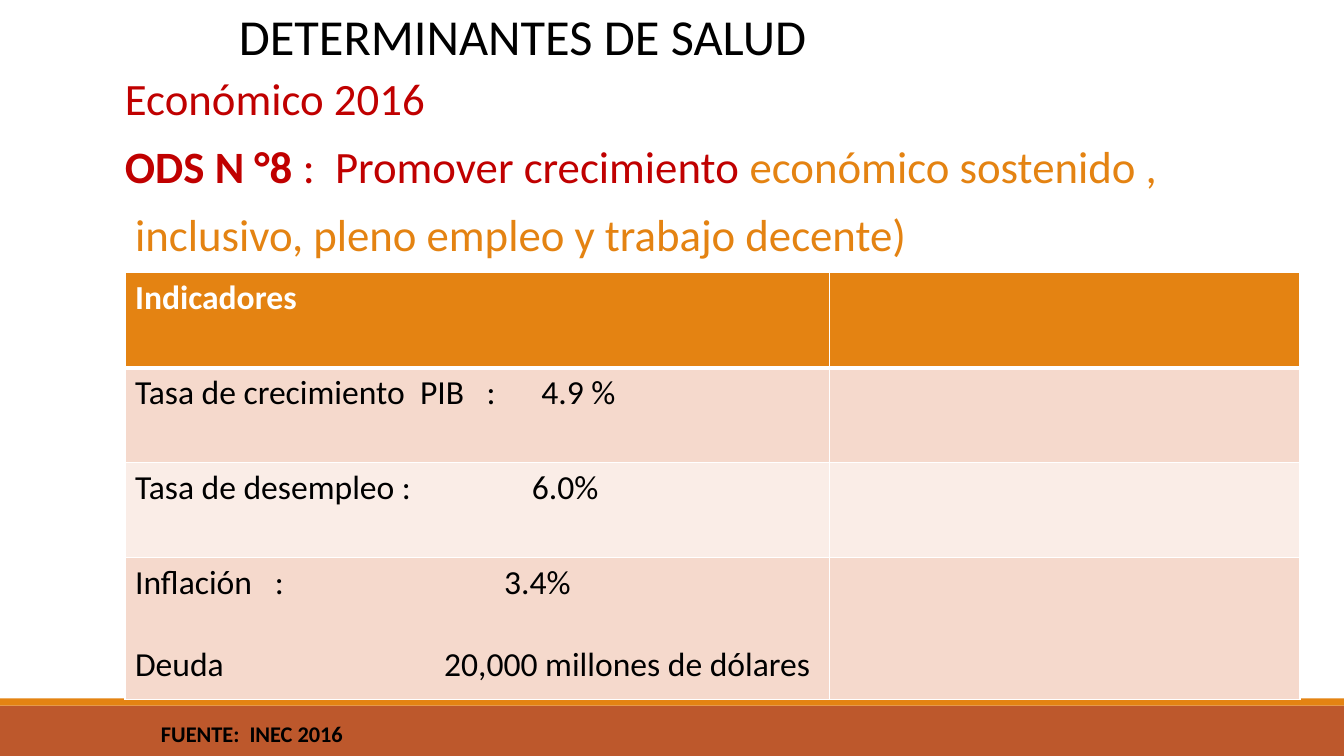
import lxml.etree
import pptx
import pptx.dml.color
import pptx.enum.shapes
import pptx.oxml.ns
import pptx.util
from pptx.util import Cm

ORANGE, RUST, RED = "E48312", "BD582C", "C00000"
BLACK, WHITE = "000000", "FFFFFF"
DARK_BAND, LIGHT_BAND = "F5D9CC", "FAEDE7"


def rgb(value):
    """Turn a hex string into a colour."""
    return pptx.dml.color.RGBColor.from_string(value)


def add_element(parent, tag, **attributes):
    """Append a drawing element to a parent element."""
    return lxml.etree.SubElement(parent, pptx.oxml.ns.qn(tag), attributes)


def add_run(paragraph, text, size, color, bold=False):
    """Append one formatted run to a paragraph."""
    run = paragraph.add_run()
    run.text = text
    run.font.name = "Calibri"
    run.font.size = pptx.util.Pt(size)
    run.font.bold = bold
    run.font.color.rgb = rgb(color)


def add_band(slide, top, height, color):
    """Draw a full-width footer band."""
    band = slide.shapes.add_shape(
        pptx.enum.shapes.MSO_SHAPE.RECTANGLE, 0, Cm(top), Cm(33.87), Cm(height))
    band.shadow.inherit = False
    band.fill.solid()
    band.fill.fore_color.rgb = rgb(color)
    band.line.fill.background()


def add_text(slide, left, top, width, height):
    """Add a wrapping text box and return its text frame."""
    frame = slide.shapes.add_textbox(Cm(left), Cm(top), Cm(width), Cm(height)).text_frame
    frame.word_wrap = True
    return frame


def add_goal(slide):
    """Write the development goal above the table."""
    lines = [
        [("Económico 2016", RED, False)],
        [("ODS N °8 ", RED, True), (":  Promover crecimiento ", RED, False),
         ("económico sostenido ,", ORANGE, False)],
        [(" inclusivo, pleno empleo y trabajo decente)", ORANGE, False)],
    ]
    goal = add_text(slide, 3.15, 1.8, 30.7, 11.18)
    goal.margin_left = goal.margin_right = 0
    for index, line in enumerate(lines):
        paragraph = goal.paragraphs[0] if index == 0 else goal.add_paragraph()
        paragraph.line_spacing = 0.9
        paragraph.space_after = pptx.util.Pt(2)
        if index:
            paragraph.space_before = pptx.util.Pt(12)
        for text, color, bold in line:
            add_run(paragraph, text, 32, color, bold)


def style_cell(cell, fill, bottom_width):
    """Give a cell white borders and a solid fill."""
    properties = cell._tc.get_or_add_tcPr()
    for side, width in (("L", 1), ("R", 1), ("T", 1), ("B", bottom_width)):
        border = add_element(properties, f"a:ln{side}", w=str(pptx.util.Pt(width)))
        add_element(add_element(border, "a:solidFill"), "a:srgbClr", val=WHITE)
    cell.fill.solid()
    cell.fill.fore_color.rgb = rgb(fill)


def add_indicator(paragraph, text, tab_stops, color, bold):
    """Write an indicator, its parts aligned at tab stops in centimetres."""
    if tab_stops:
        tabs = add_element(paragraph._p.get_or_add_pPr(), "a:tabLst")
        for stop in tab_stops:
            add_element(tabs, "a:tab", pos=str(Cm(stop)), algn="l")
    add_run(paragraph, text, 24, color, bold)


def add_indicators(slide):
    """Build the table of economic indicators."""
    rows = [
        (2.41, ORANGE, [("Indicadores", [])]),
        (2.39, DARK_BAND, [("Tasa de crecimiento  PIB\t:\t4.9 %", [8.86, 10.24])]),
        (2.39, LIGHT_BAND, [("Tasa de desempleo :\t6.0%", [10])]),
        (3.58, DARK_BAND, [("Inflación\t:\t3.4%", [3.52, 9.3]),
                           ("Deuda\t20,000 millones de dólares", [7.79])]),
    ]
    table = slide.shapes.add_table(
        len(rows), 2, Cm(3.15), Cm(6.86), Cm(29.61), Cm(10.77)).table
    table.columns[0].width, table.columns[1].width = Cm(17.75), Cm(11.86)
    for index, (height, fill, indicators) in enumerate(rows):
        header = index == 0
        table.rows[index].height = Cm(height)
        for cell in table.rows[index].cells:
            style_cell(cell, fill, 3 if header else 1)
        frame = table.cell(index, 0).text_frame
        for position, (text, stops) in enumerate(indicators):
            paragraph = frame.add_paragraph() if position else frame.paragraphs[0]
            if position:
                paragraph.space_before = pptx.util.Pt(29.3)
            add_indicator(paragraph, text, stops, WHITE if header else BLACK, header)


def main():
    """Build and save the slide."""
    deck = pptx.Presentation()
    deck.slide_width, deck.slide_height = Cm(33.87), Cm(19.05)
    slide = deck.slides.add_slide(deck.slide_layouts[6])
    add_band(slide, 17.78, 1.27, RUST)
    add_band(slide, 17.6, 0.18, ORANGE)
    add_goal(slide)
    add_indicators(slide)
    source = add_text(slide, 3.68, 18.03, 8.84, 0.94)
    add_run(source.paragraphs[0], " FUENTE:  INEC 2016", 16, BLACK, True)
    title = add_text(slide, 5.77, 0, 21.72, 1.8)
    add_run(title.paragraphs[0], "DETERMINANTES DE SALUD", 36, BLACK)
    deck.save("out.pptx")


if __name__ == "__main__":
    main()
